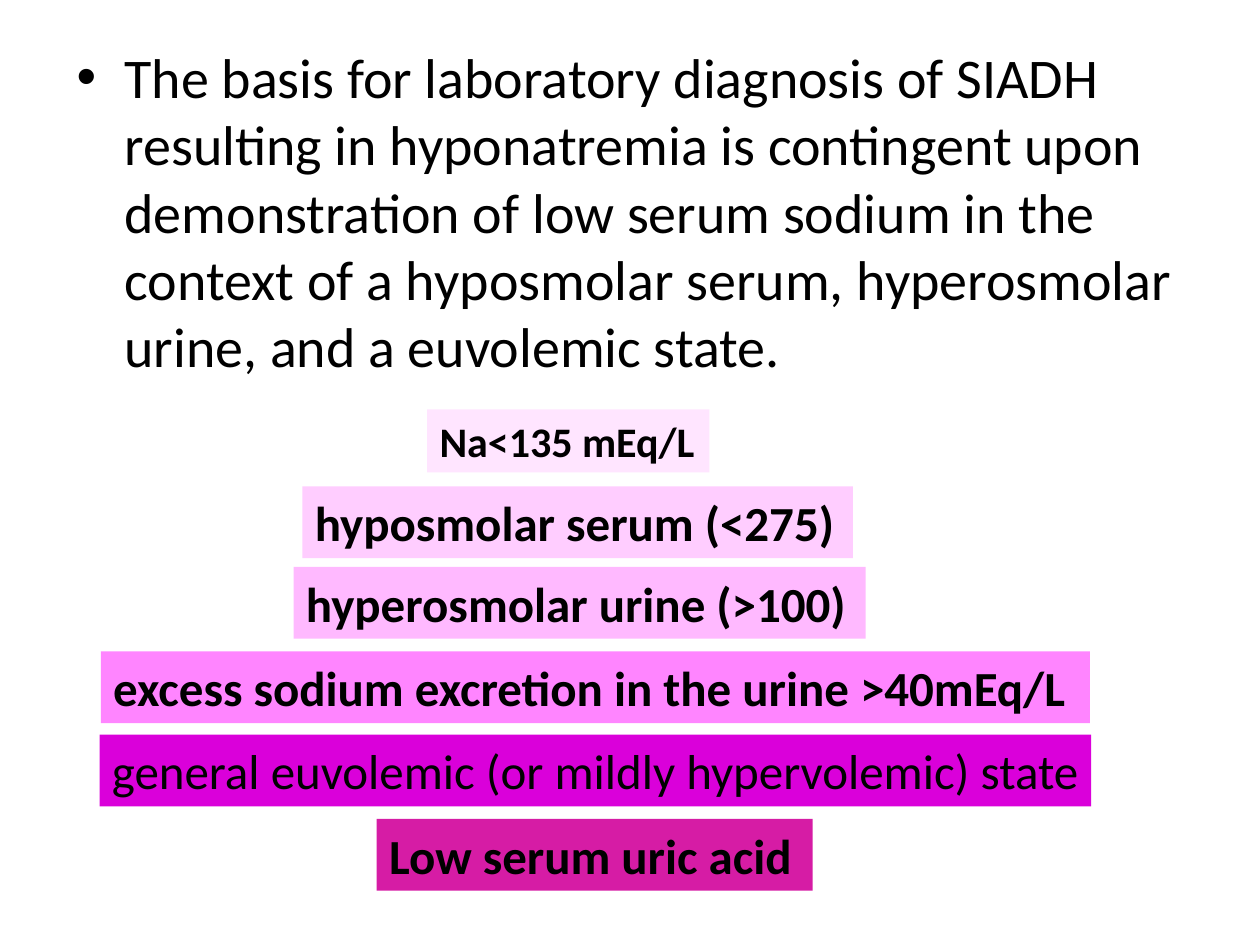
from lxml import etree
from pptx import Presentation
from pptx.dml.color import RGBColor
from pptx.enum.text import MSO_ANCHOR
from pptx.oxml.ns import qn
from pptx.util import Inches, Pt

TOP = MSO_ANCHOR.TOP
FONT = "Calibri"
BLACK = "000000"

DIAGNOSIS = (
    "The basis for laboratory diagnosis of SIADH resulting in hyponatremia is "
    "contingent upon demonstration of low serum sodium in the context of a "
    "hyposmolar serum, hyperosmolar urine, and a euvolemic state."
)

# text, left, top, width, height, fill, size, bold
CRITERIA = [
    ("Na<135 mEq/L", 3.39, 3.25, 2.24, 0.5, "FFE5FF", 24, True),
    ("hyposmolar serum (<275)", 2.4, 3.86, 4.37, 0.57, "FFCDFF", 28, True),
    ("hyperosmolar urine (>100)", 2.33, 4.5, 4.54, 0.57, "FFB9FF", 28, True),
    ("excess sodium excretion in the urine >40mEq/L",
     0.8, 5.17, 7.85, 0.57, "FF85FF", 28, True),
    ("general euvolemic (or mildly hypervolemic) state",
     0.79, 5.83, 7.87, 0.57, "DA00DA", 28, False),
    ("Low serum uric acid", 2.99, 6.5, 3.46, 0.57, "D61CA5", 28, True),
]


def color(hex_value):
    return RGBColor.from_string(hex_value)


def add_text(slide, text, left, top, width, height, size, bold=False):
    box = slide.shapes.add_textbox(
        Inches(left), Inches(top), Inches(width), Inches(height))
    frame = box.text_frame
    frame.word_wrap = True
    frame.vertical_anchor = TOP
    paragraph = frame.paragraphs[0]
    paragraph.text = text
    return box, paragraph, style(paragraph, size, bold)


def style(paragraph, size, bold):
    font = paragraph.font
    font.name = FONT
    font.size = Pt(size)
    font.bold = bold
    font.color.rgb = color(BLACK)
    return font


def add_bulleted_statement(slide, text):
    box = slide.shapes.add_textbox(
        Inches(0.51), Inches(0.29), Inches(9), Inches(4.95))
    box.text_frame.word_wrap = True
    paragraph = box.text_frame.paragraphs[0]
    paragraph.text = text
    properties = paragraph._p.get_or_add_pPr()
    properties.set("marL", str(Inches(0.38)))
    properties.set("indent", str(Inches(-0.38)))
    etree.SubElement(properties, qn("a:buFont")).set("typeface", "Arial")
    etree.SubElement(properties, qn("a:buChar")).set("char", "•")
    style(paragraph, 32, False)


def add_criterion(slide, text, left, top, width, height, fill, size, bold):
    box = slide.shapes.add_textbox(
        Inches(left), Inches(top), Inches(width), Inches(height))
    box.fill.solid()
    box.fill.fore_color.rgb = color(fill)
    frame = box.text_frame
    frame.word_wrap = True
    frame.vertical_anchor = TOP
    frame.margin_right = 0
    paragraph = frame.paragraphs[0]
    paragraph.text = text
    style(paragraph, size, bold)


def main():
    presentation = Presentation()
    presentation.slide_width = Inches(10)
    presentation.slide_height = Inches(7.5)
    slide = presentation.slides.add_slide(presentation.slide_layouts[6])
    add_bulleted_statement(slide, DIAGNOSIS)
    for criterion in CRITERIA:
        add_criterion(slide, *criterion)
    presentation.save("out.pptx")


if __name__ == "__main__":
    main()
